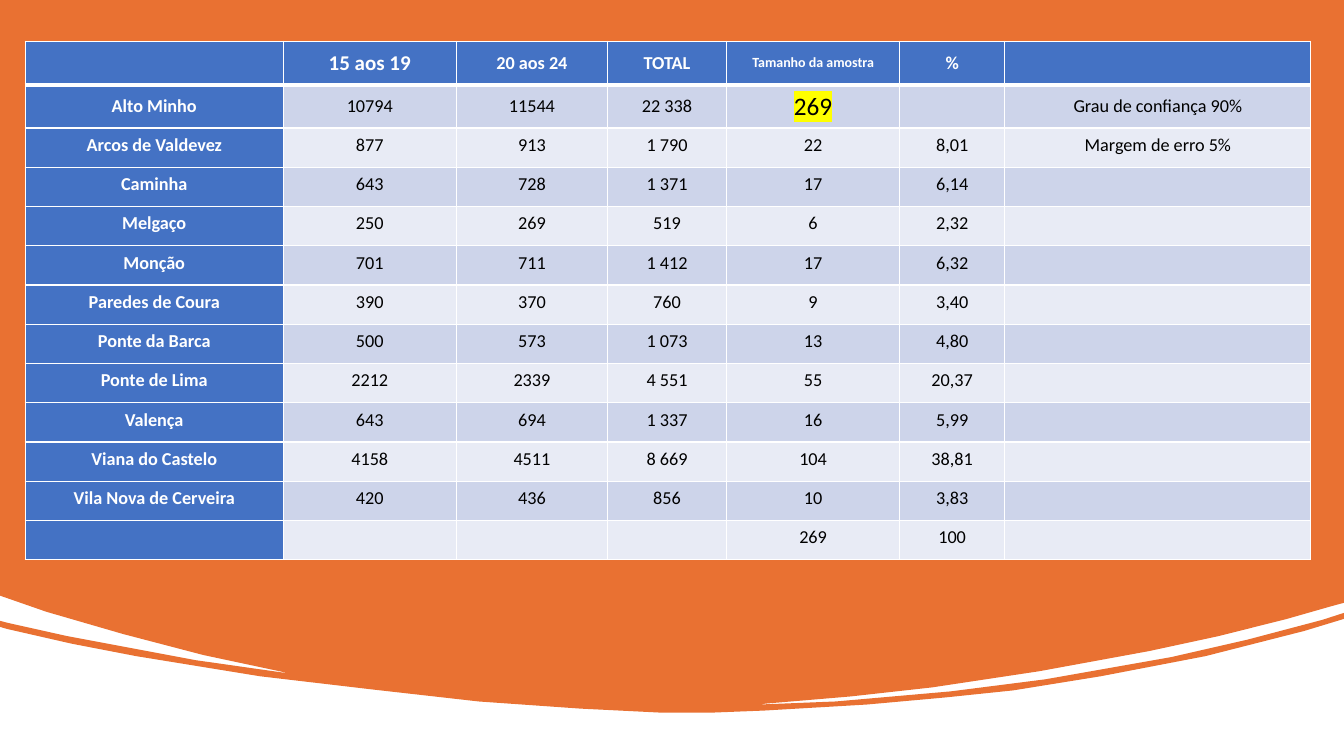
from pptx import Presentation
from pptx.dml.color import RGBColor
from pptx.enum.text import MSO_ANCHOR, PP_ALIGN
from pptx.oxml import parse_xml
from pptx.oxml.ns import nsdecls, qn
from pptx.util import Pt

COLORS = {
    "orange": "E97132", "blue": "4472C4", "white": "FFFFFF", "black": "000000",
    "dark band": "CDD4EA", "light band": "E8EBF5", "yellow": "FFFF00",
}

# Orange area, clockwise, with the white slits left open at both edges
WAVE = [
    (0, 0), (960, 0),
    (960, 430.6), (949.7, 433.4), (919.4, 442.1), (870.5, 454.4), (820.8, 465.1),
    (742.3, 479.5), (666, 491), (607.7, 497.5), (547.2, 502.6), (535, 504),
    (542.2, 503.3), (596.9, 501.1), (679, 493.9), (746.6, 485.3), (836.6, 469.4),
    (891.2, 456.9), (944.6, 442.8), (960, 437.8),
    (960, 442.1), (931.7, 450.7), (861.1, 468.7), (786.2, 483.1), (723.6, 493.2),
    (675.4, 498.2), (619.2, 503.3), (545.8, 507.6), (509.8, 509), (470.9, 509),
    (414.7, 506.2), (342, 501.1), (265.7, 492.5), (185.8, 483.1), (97.2, 468.7),
    (51.1, 459.8), (5, 449.3), (0, 447.8),
    (0, 443.5), (5.8, 445), (47.5, 454.3), (139.7, 471.6), (205.9, 481),
    (203, 480.2), (145.2, 467.9), (87.8, 452.9), (33.1, 437), (0, 425.5),
]

WIDTHS = [184.3, 123.7, 108, 85, 123.7, 75, 218.8]
HEIGHTS = [31, 31] + [28.05] * 11
ROWS = [
    ["", "15 aos 19", "20 aos 24", "TOTAL", "Tamanho da amostra", "%", ""],
    ["Alto Minho", "10794", "11544", "22 338", "269", "", "Grau de confiança 90%"],
    ["Arcos de Valdevez", "877", "913", "1 790", "22", "8,01", "Margem de erro 5%"],
    ["Caminha", "643", "728", "1 371", "17", "6,14", ""],
    ["Melgaço", "250", "269", "519", "6", "2,32", ""],
    ["Monção", "701", "711", "1 412", "17", "6,32", ""],
    ["Paredes de Coura", "390", "370", "760", "9", "3,40", ""],
    ["Ponte da Barca", "500", "573", "1 073", "13", "4,80", ""],
    ["Ponte de Lima", "2212", "2339", "4 551", "55", "20,37", ""],
    ["Valença", "643", "694", "1 337", "16", "5,99", ""],
    ["Viana do Castelo", "4158", "4511", "8 669", "104", "38,81", ""],
    ["Vila Nova de Cerveira", "420", "436", "856", "10", "3,83", ""],
    ["", "", "", "", "269", "100", ""],
]
# Cells whose text differs from the rest, by row and column
SPECIAL = {
    (0, 1): {"size": 15},
    (0, 4): {"size": 10},
    (1, 4): {"size": 18, "mark": "yellow"},
}


def color(name):
    return RGBColor.from_string(COLORS[name])


def write(frame, text, font="Calibri", size=13, ink="black", bold=False, mark=None):
    para = frame.paragraphs[0]
    para.alignment = PP_ALIGN.CENTER
    if not text:
        # An empty cell needs a small font too, or its row grows
        para._p.get_or_add_endParaRPr().set("sz", str(size * 100))
        return
    run = para.add_run()
    run.text = text
    run.font.name = font
    run.font.size = Pt(size)
    run.font.bold = bold
    run.font.color.rgb = color(ink)
    if mark:
        run._r.rPr.find(qn("a:solidFill")).addnext(parse_xml(
            f'<a:highlight {nsdecls("a")}><a:srgbClr val="{COLORS[mark]}"/></a:highlight>'))


class Deck:
    def __init__(self, wide, high):
        self.prs = Presentation()
        self.prs.slide_width, self.prs.slide_height = Pt(wide), Pt(high)
        self.slide = self.prs.slides.add_slide(self.prs.slide_layouts[6])

    def shape(self, points, fill):
        start, *rest = [(Pt(x), Pt(y)) for x, y in points]
        builder = self.slide.shapes.build_freeform(*start)
        builder.add_line_segments(rest, close=True)
        shape = builder.convert_to_shape()
        shape.shadow.inherit = False
        shape.fill.solid()
        shape.fill.fore_color.rgb = color(fill)
        shape.line.fill.background()

    def border(self, cell, top, bottom):
        for side, width in zip("LRTB", (1, 1, top, bottom)):
            cell._tc.get_or_add_tcPr().append(parse_xml(
                f'<a:ln{side} {nsdecls("a")} w="{Pt(width)}"><a:solidFill>'
                f'<a:srgbClr val="{COLORS["white"]}"/></a:solidFill></a:ln{side}>'))

    def cell(self, cell, row, col, text):
        head = row == 0 or col == 0
        band = "dark band" if row % 2 else "light band"
        cell.margin_left = cell.margin_right = Pt(3.6)
        cell.margin_top = cell.margin_bottom = Pt(4.3)
        cell.vertical_anchor = MSO_ANCHOR.MIDDLE if row < 2 else MSO_ANCHOR.TOP
        self.border(cell, top=3 if row == 1 else 1, bottom=3 if row == 0 else 1)
        cell.fill.solid()
        cell.fill.fore_color.rgb = color("blue" if head else band)
        write(cell.text_frame, text, ink="white" if head else "black", bold=head,
              **SPECIAL.get((row, col), {}))

    def table(self, left, top, rows, widths, heights):
        table = self.slide.shapes.add_table(
            len(rows), len(widths), Pt(left), Pt(top),
            Pt(sum(widths)), Pt(sum(heights))).table
        for column, width in zip(table.columns, widths):
            column.width = Pt(width)
        for line, height in zip(table.rows, heights):
            line.height = Pt(height)
        for row, texts in enumerate(rows):
            for col, text in enumerate(texts):
                self.cell(table.cell(row, col), row, col, text)


def main():
    deck = Deck(960, 540)
    deck.shape(WAVE, "orange")
    deck.table(18, 29.5, ROWS, WIDTHS, HEIGHTS)
    deck.prs.save("out.pptx")


if __name__ == "__main__":
    main()
